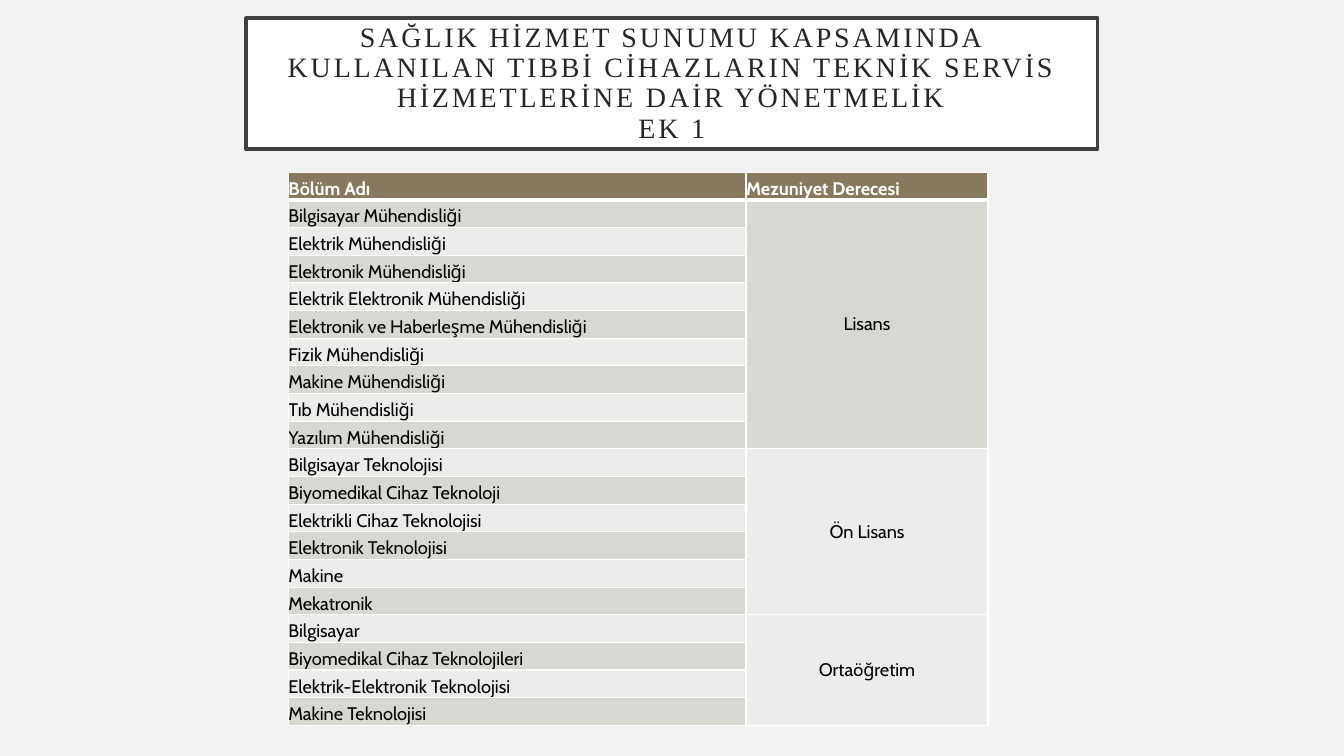
import pptx
import pptx.util
import pptx.dml.color
import pptx.enum.text
import pptx.oxml
import pptx.oxml.ns

Pt = pptx.util.Pt
RGB = pptx.dml.color.RGBColor.from_string
ALIGN = pptx.enum.text.PP_ALIGN
ANCHOR = pptx.enum.text.MSO_ANCHOR

# Content
TITLE = ("SAĞLIK HİZMET SUNUMU KAPSAMINDA KULLANILAN TIBBİ CİHAZLARIN "
         "TEKNİK SERVİS HİZMETLERİNE DAİR YÖNETMELİK\vEK 1")
HEADS = ["Bölüm Adı", "Mezuniyet Derecesi"]
GROUPS = [
    ("Lisans", [
        "Bilgisayar Mühendisliği", "Elektrik Mühendisliği",
        "Elektronik Mühendisliği", "Elektrik Elektronik Mühendisliği",
        "Elektronik ve Haberleşme Mühendisliği", "Fizik Mühendisliği",
        "Makine Mühendisliği", "Tıb Mühendisliği", "Yazılım Mühendisliği"]),
    ("Ön Lisans", [
        "Bilgisayar Teknolojisi", "Biyomedikal Cihaz Teknoloji",
        "Elektrikli Cihaz Teknolojisi", "Elektronik Teknolojisi",
        "Makine", "Mekatronik"]),
    ("Ortaöğretim", [
        "Bilgisayar", "Biyomedikal Cihaz Teknolojileri",
        "Elektrik-Elektronik Teknolojisi", "Makine Teknolojisi"]),
]

THEME = {
    "page": "F2F2F2", "white": "FFFFFF", "frame": "404040",
    "title": "262626", "text": "000000", "head": "87795D",
    "bands": ["D9D7D2", "EDECEA"],
    "serif": "Times New Roman", "sans": "Cabin",
    "big": 20, "small": 13,
}
COLS = [326.9, 172.8]
ROW = 19.77


def write(box, text, font=THEME["sans"], size=THEME["small"],
          color=THEME["text"], bold=False, align=ALIGN.LEFT, space=0, lead=1.0):
    par = box.text_frame.paragraphs[0]
    par.text = text
    par.alignment = align
    par.line_spacing = lead
    for run in par.runs:
        run.font.name = font
        run.font.size = Pt(size)
        run.font.bold = bold
        run.font.color.rgb = RGB(color)
        if space:
            run.font._element.set("spc", str(space * 100))


def style(cell, fill, anchor, top=1, base=1):
    cell.margin_left = cell.margin_right = 0
    cell.margin_top = cell.margin_bottom = 0
    cell.vertical_anchor = anchor
    cell.fill.solid()
    cell.fill.fore_color.rgb = RGB(fill)
    props = cell._tc.get_or_add_tcPr()
    sides = [("L", 1), ("R", 1), ("T", top), ("B", base)]
    for spot, (side, width) in enumerate(sides):
        props.insert(spot, pptx.oxml.parse_xml(
            f'<a:ln{side} {pptx.oxml.ns.nsdecls("a")} w="{Pt(width)}">'
            f'<a:solidFill><a:srgbClr val="{THEME["white"]}"/></a:solidFill>'
            f'</a:ln{side}>'))


# Page
deck = pptx.Presentation()
deck.slide_width, deck.slide_height = Pt(960), Pt(540)
slide = deck.slides.add_slide(deck.slide_layouts[5])
slide.background.fill.solid()
slide.background.fill.fore_color.rgb = RGB(THEME["page"])

# Framed title
title = slide.shapes.title
title.left, title.top, title.width, title.height = map(Pt, (175.7, 13, 608.4, 93.6))
title.fill.solid()
title.fill.fore_color.rgb = RGB(THEME["white"])
title.line.color.rgb = RGB(THEME["frame"])
title.line.width = Pt(2.5)
frame = title.text_frame
frame.word_wrap = True
frame.auto_size = pptx.enum.text.MSO_AUTO_SIZE.NONE
frame.vertical_anchor = ANCHOR.MIDDLE
frame.margin_left = frame.margin_right = Pt(14.4)
frame.margin_top = frame.margin_bottom = Pt(14.4)
write(title, TITLE, font=THEME["serif"], size=THEME["big"],
      color=THEME["title"], align=ALIGN.CENTER, space=2, lead=0.9)

# Table grid
count = 1 + sum(len(names) for _, names in GROUPS)
table = slide.shapes.add_table(count, len(COLS), Pt(206), Pt(123),
                               Pt(sum(COLS)), Pt(ROW * count)).table
for col, width in zip(table.columns, COLS):
    col.width = Pt(width)
for row in table.rows:
    row.height = Pt(ROW)

# Header row
for col, head in enumerate(HEADS):
    cell = table.cell(0, col)
    style(cell, THEME["head"], ANCHOR.BOTTOM, base=3)
    write(cell, head, color=THEME["white"], bold=True)

# Departments, with one merged degree cell for each group
row = 1
for degree, names in GROUPS:
    first = row
    shade = THEME["bands"][(first - 1) % 2]
    for name in names:
        top = 3 if row == 1 else 1
        cell = table.cell(row, 0)
        style(cell, THEME["bands"][(row - 1) % 2], ANCHOR.BOTTOM, top=top)
        write(cell, name)
        style(table.cell(row, 1), shade, ANCHOR.MIDDLE, top=top)
        row += 1
    table.cell(first, 1).merge(table.cell(row - 1, 1))
    write(table.cell(first, 1), degree, align=ALIGN.CENTER)

deck.save("out.pptx")
